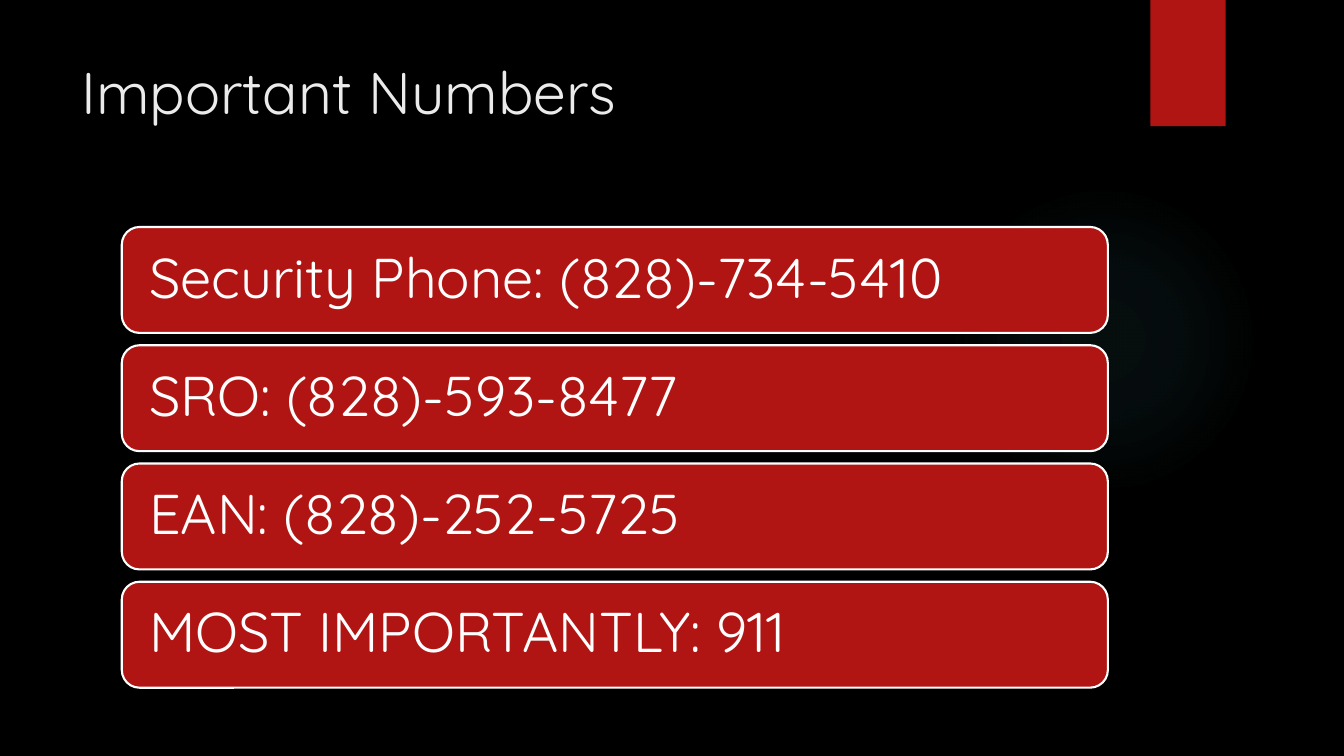
import pptx
import pptx.util
import pptx.dml.color
import pptx.enum.shapes
import pptx.enum.text
import pptx.oxml.ns
import lxml.etree

Cm = pptx.util.Cm
Pt = pptx.util.Pt
SHAPE = pptx.enum.shapes.MSO_SHAPE
ALIGN = pptx.enum.text.PP_ALIGN
ANCHOR = pptx.enum.text.MSO_ANCHOR

RED, WHITE, PALE, BLACK, TEAL = "B01513", "FFFFFF", "EBEBEB", "000000", "50B9C1"
NUMBERS = [
    "Security Phone: (828)-734-5410",
    "SRO: (828)-593-8477",
    "EAN: (828)-252-5725",
    "MOST IMPORTANTLY: 911",
]


def color(code):
    return pptx.dml.color.RGBColor.from_string(code)


class Deck:
    font = "Quicksand"

    def __init__(self):
        self.prs = pptx.Presentation()
        self.prs.slide_width, self.prs.slide_height = Cm(33.87), Cm(19.05)
        self.slide = self.prs.slides.add_slide(self.prs.slide_layouts[5])
        back = self.slide.background.fill
        back.solid()
        back.fore_color.rgb = color(BLACK)

    def label(self, frame, text, size, code, anchor):
        frame.word_wrap = True
        frame.auto_size = pptx.enum.text.MSO_AUTO_SIZE.NONE
        frame.vertical_anchor = anchor
        para = frame.paragraphs[0]
        para.alignment = ALIGN.LEFT
        run = para.add_run()
        run.text = text
        run.font.name = self.font
        run.font.size = Pt(size)
        run.font.color.rgb = color(code)
        return para

    def title(self, text, left, top, width, height):
        box = self.slide.shapes.title
        box.left, box.top = Cm(left), Cm(top)
        box.width, box.height = Cm(width), Cm(height)
        self.label(box.text_frame, text, 42, PALE, ANCHOR.TOP)

    def shape(self, kind, left, top, width, height, fill=RED):
        item = self.slide.shapes.add_shape(
            kind, Cm(left), Cm(top), Cm(width), Cm(height))
        item.shadow.inherit = False
        item.fill.solid()
        item.fill.fore_color.rgb = color(fill)
        item.line.fill.background()
        return item

    def glow(self, left, top, size, stops):
        item = self.shape(SHAPE.OVAL, left, top, size, size, TEAL)
        # Radial fill that fades out
        marks = "".join(
            f'<a:gs pos="{pos * 1000}"><a:srgbClr val="{TEAL}">'
            f'<a:alpha val="{alpha * 1000}"/></a:srgbClr></a:gs>'
            for pos, alpha in stops)
        grad = lxml.etree.fromstring(
            '<a:gradFill xmlns:a="http://schemas.openxmlformats.org/drawingml/2006/main">'
            f'<a:gsLst>{marks}</a:gsLst><a:path path="circle">'
            '<a:fillToRect l="50000" t="50000" r="50000" b="50000"/>'
            '</a:path></a:gradFill>')
        props = item.element.spPr
        solid = props.find(pptx.oxml.ns.qn("a:solidFill"))
        props.replace(solid, grad)

    def card(self, text, left, top, width, height):
        item = self.shape(SHAPE.ROUNDED_RECTANGLE, left, top, width, height)
        item.line.color.rgb = color(WHITE)
        item.line.width = Pt(1.5)
        frame = item.text_frame
        frame.margin_left = frame.margin_right = Cm(0.56)
        para = self.label(frame, text, 40, WHITE, ANCHOR.MIDDLE)
        para.line_spacing = 0.9


def main():
    deck = Deck()

    # Backdrop
    deck.glow(23.9, 4.65, 7.82, [(0, 7), (36, 6), (69, 0)])
    deck.shape(SHAPE.RECTANGLE, 28.99, 0, 1.9, 3.18)

    # Heading
    deck.title("Important Numbers", 1.8, 1.27, 26.14, 3.89)

    # Phone list
    top, height, gap = 5.72, 2.67, 0.31
    for row, text in enumerate(NUMBERS):
        deck.card(text, 3.07, top + row * (height + gap), 24.85, height)

    deck.prs.save("out.pptx")


if __name__ == "__main__":
    main()
